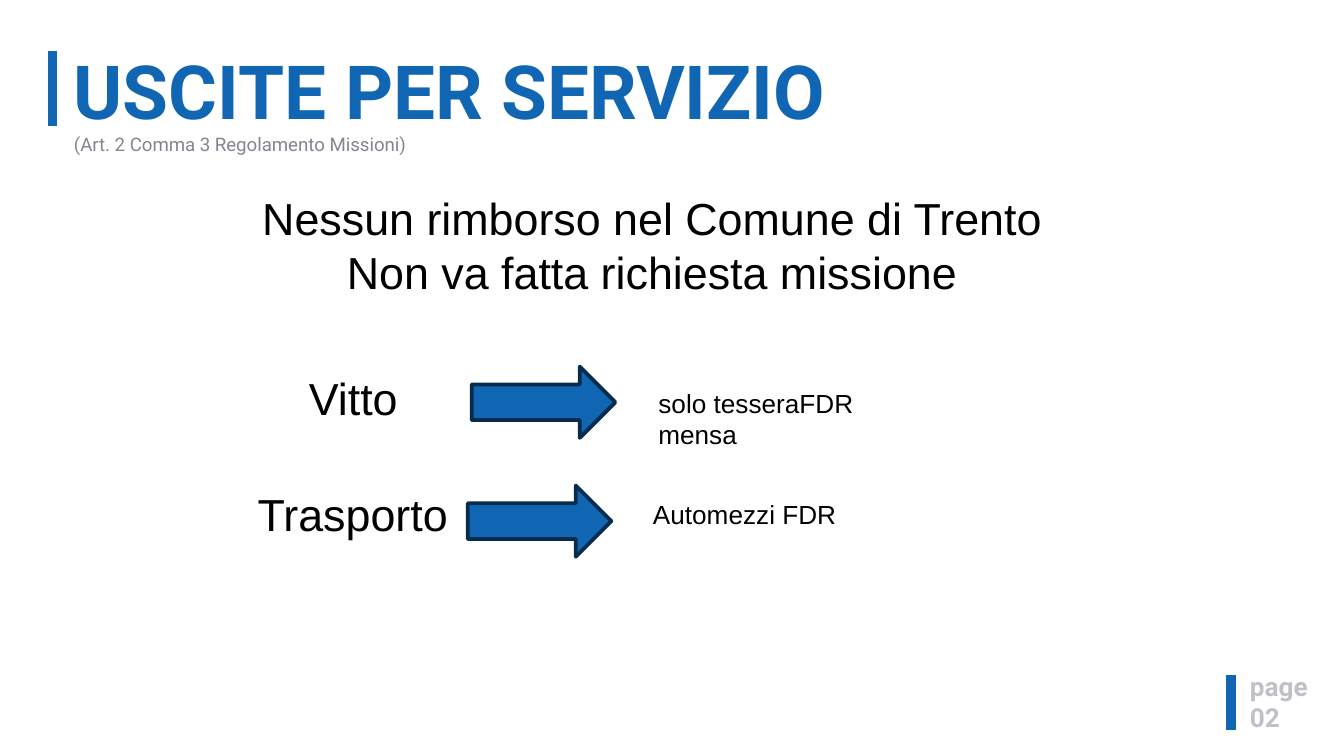
from dataclasses import dataclass

from lxml import etree
from pptx import Presentation
from pptx.dml.color import RGBColor
from pptx.enum import shapes, text
from pptx.oxml.ns import qn
from pptx.util import Pt


@dataclass(frozen=True)
class Theme:
    blue: str = "1166B3"
    navy: str = "072D4E"
    grey: str = "858591"
    pale: str = "C0C0C8"
    black: str = "000000"
    heading_font: str = "Roboto"
    body_font: str = "Arial"
    title: int = 40
    large: int = 24
    small: int = 14
    caption: int = 10


THEME = Theme()
TIGHT = (3.6, 1.8)
NORMAL = (7.2, 3.6)


def write(para, words, size=THEME.small, font=THEME.body_font, color=THEME.black, bold=False):
    span = para.add_run()
    span.text = words
    span.font.size = Pt(size)
    span.font.name = font
    span.font.bold = bold
    span.font.color.rgb = RGBColor.from_string(color)


class Page:
    def __init__(self, deck, theme):
        self.theme = theme
        self.slide = deck.slides.add_slide(deck.slide_layouts[5])

    def frame(self, box, margins, anchor=text.MSO_ANCHOR.TOP):
        frame = box.text_frame
        frame.word_wrap = True
        frame.auto_size = text.MSO_AUTO_SIZE.NONE
        frame.vertical_anchor = anchor
        frame.margin_left = frame.margin_right = Pt(margins[0])
        frame.margin_top = frame.margin_bottom = Pt(margins[1])
        return frame

    def title(self, heading, caption, left, top, width, height):
        box = self.slide.shapes.title
        box.left, box.top, box.width, box.height = map(Pt, (left, top, width, height))
        para = self.frame(box, TIGHT, text.MSO_ANCHOR.MIDDLE).paragraphs[0]
        para.alignment = text.PP_ALIGN.LEFT
        para.line_spacing = 0.9
        font = self.theme.heading_font
        write(para, heading, self.theme.title, font, self.theme.blue, bold=True)
        para.add_line_break()
        write(para, caption, self.theme.caption, font, self.theme.grey)

    def label(self, lines, left, top, width, height, margins=NORMAL,
              align=text.PP_ALIGN.LEFT, **style):
        box = self.slide.shapes.add_textbox(*map(Pt, (left, top, width, height)))
        frame = self.frame(box, margins)
        for index, line in enumerate(lines):
            para = frame.add_paragraph() if index else frame.paragraphs[0]
            para.alignment = align
            write(para, line, **style)
        return frame

    def bar(self, x, top, bottom):
        line = self.slide.shapes.add_connector(
            shapes.MSO_CONNECTOR.STRAIGHT, Pt(x), Pt(top), Pt(x), Pt(bottom))
        line.line.color.rgb = RGBColor.from_string(self.theme.blue)
        line.line.width = Pt(5)
        etree.SubElement(line._element.spPr, qn("a:effectLst"))

    def arrow(self, left, top, width=77, height=38.2):
        shape = self.slide.shapes.add_shape(
            shapes.MSO_SHAPE.RIGHT_ARROW, *map(Pt, (left, top, width, height)))
        shape.shadow.inherit = False
        shape.fill.solid()
        shape.fill.fore_color.rgb = RGBColor.from_string(self.theme.blue)
        shape.line.color.rgb = RGBColor.from_string(self.theme.navy)
        shape.line.width = Pt(2)


def main():
    deck = Presentation()
    deck.slide_width, deck.slide_height = Pt(720), Pt(405)
    page = Page(deck, THEME)

    # Accent bars and title
    page.bar(28.1, 27.2, 67.5)
    page.bar(659.5, 361.6, 391)
    page.title("USCITE PER SERVIZIO", "(Art. 2 Comma 3 Regolamento Missioni)",
               36, 27.4, 579, 58.3)

    # Page number
    page.label(["page", "02"], 666, 357.1, 68.4, 37.4, margins=TIGHT,
               font=THEME.heading_font, color=THEME.pale, bold=True)

    # Expense rows: name, arrow, rule
    rows = [
        ("Vitto", (158.4, 195.1, 67), (252.7, 196.4),
         "solo tesseraFDR mensa", (345.6, 203.8, 157.7, 41)),
        ("Trasporto", (131, 257, 122.4), (250.6, 260.1),
         "Automezzi FDR", (342.7, 263.5, 157.7, 24.5)),
    ]
    for name, name_place, arrow_place, rule, rule_place in rows:
        page.label([name], *name_place, 36, size=THEME.large)
        page.arrow(*arrow_place)
        page.label([rule], *rule_place)

    # Main message, second line set slightly to the left
    message = page.label(
        ["Nessun rimborso nel Comune di Trento", "Non va fatta richiesta missione"],
        65.5, 98.6, 567.4, 65.5, align=text.PP_ALIGN.CENTER, size=THEME.large)
    second = message.paragraphs[1]._p.get_or_add_pPr()
    second.set("marL", "0")
    second.set("indent", str(Pt(-13.3)))

    deck.save("out.pptx")


if __name__ == "__main__":
    main()
